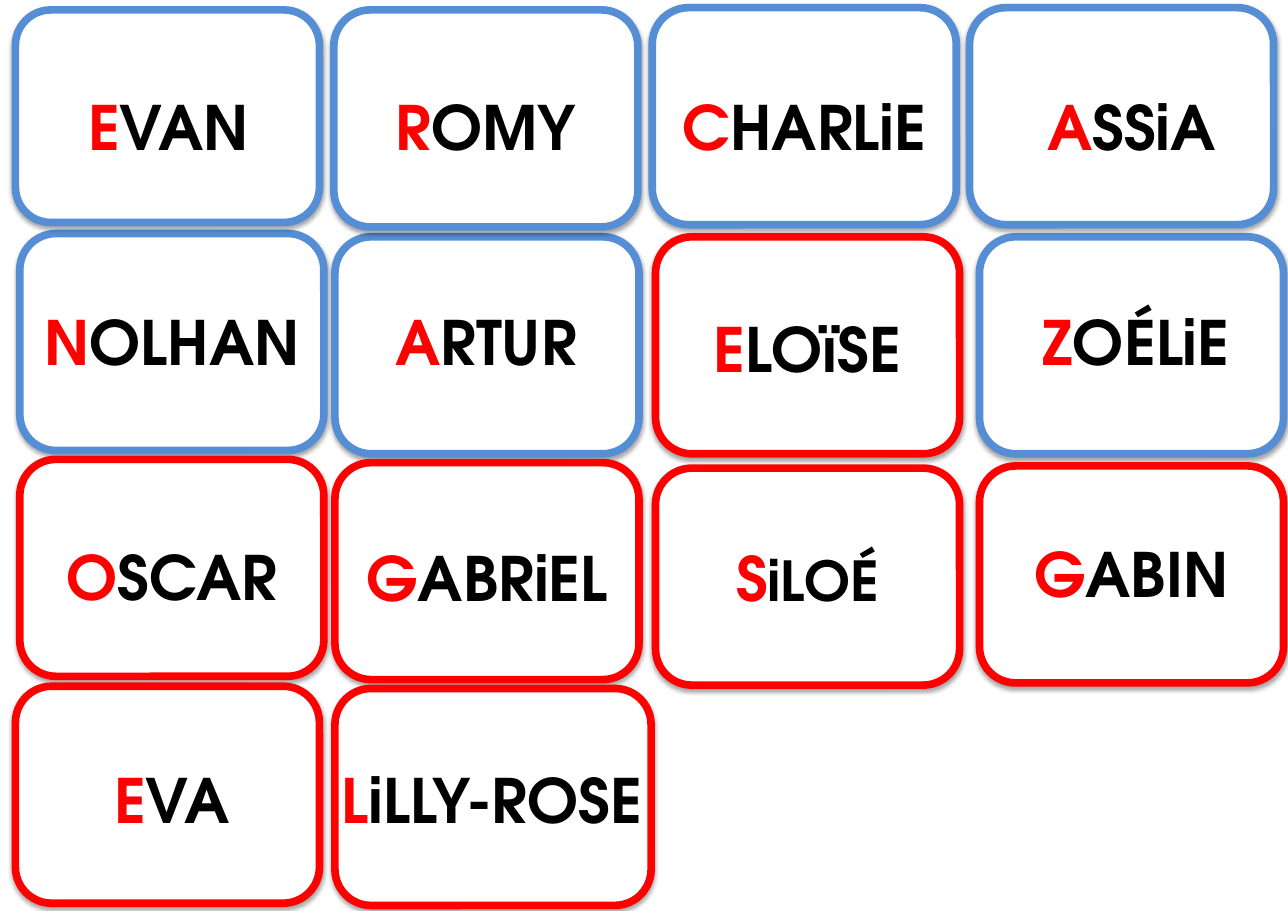
"""Build a sheet of first-name cards, each with a red initial."""
from dataclasses import dataclass

from lxml import etree
from pptx import Presentation
from pptx.dml.color import RGBColor
from pptx.enum.shapes import MSO_SHAPE
from pptx.enum.text import MSO_AUTO_SIZE, PP_ALIGN
from pptx.oxml.ns import qn
from pptx.util import Pt

ROUNDED = MSO_SHAPE.ROUNDED_RECTANGLE
CENTER = PP_ALIGN.CENTER
GROW = MSO_AUTO_SIZE.SHAPE_TO_FIT_TEXT
FONT = "TeX Gyre Adventor"
BLUE, RED, BLACK, WHITE = "558ED5", "FF0000", "000000", "FFFFFF"
CARD_WIDTH, CARD_HEIGHT, LABEL_HEIGHT = 198.72, 141.84, 55.44


@dataclass
class NameCard:
    name: str
    border: str
    left: float
    top: float
    label_left: float
    label_top: float
    width: float = CARD_WIDTH
    height: float = CARD_HEIGHT
    label_width: float = CARD_WIDTH
    ending_size: float = 40


CARDS = [
    NameCard("ZOÉLiE", BLUE, 640.08, 154.8, 642.96, 195.12),
    NameCard("NOLHAN", BLUE, 12.96, 152.64, 12.96, 195.12),
    NameCard("ARTUR", BLUE, 218.88, 154.8, 218.16, 195.12),
    NameCard("EVAN", BLUE, 10.08, 6.48, 10.8, 54.72, height=138.96),
    NameCard("ROMY", BLUE, 218.16, 6.48, 218.16, 54.72),
    NameCard("CHARLiE", BLUE, 426.24, 5.04, 426.24, 54.72),
    NameCard("ASSiA", BLUE, 633.6, 5.04, 640.08, 54.72),
    NameCard("ELOïSE", RED, 428.4, 154.8, 428.4, 200.16),
    NameCard("OSCAR", RED, 12.96, 300.24, 12.96, 349.2),
    NameCard("GABRiEL", RED, 218.88, 302.4, 218.88, 349.92),
    NameCard("SiLOÉ", RED, 428.4, 306, 428.4, 349.92, ending_size=36),
    NameCard("GABIN", RED, 640.08, 304.56, 640.08, 347.04),
    NameCard("EVA", RED, 10.08, 448.56, 12.96, 494.64),
    NameCard("LiLLY-ROSE", RED, 218.88, 450, 205.92, 494.64,
             width=206.64, label_width=231.12),
]


def rgb(value: str) -> RGBColor:
    return RGBColor.from_string(value)


def add_run(paragraph, text: str, *, color: str, size: float = 40) -> None:
    run = paragraph.add_run()
    run.text = text
    run.font.name = FONT
    run.font.size = Pt(size)
    run.font.bold = True
    run.font.color.rgb = rgb(color)


def add_shadow(shape) -> None:
    shape.shadow.inherit = False
    effects = shape.element.spPr.find(qn("a:effectLst"))
    shadow = etree.SubElement(
        effects, qn("a:outerShdw"), blurRad=str(Pt(3.1)), dist=str(Pt(1.8)),
        dir="5400000", rotWithShape="0")
    tint = etree.SubElement(shadow, qn("a:srgbClr"), val=BLACK)
    etree.SubElement(tint, qn("a:alpha"), val="35000")


def draw_frame(slide, card: NameCard) -> None:
    frame = slide.shapes.add_shape(
        ROUNDED, Pt(card.left), Pt(card.top), Pt(card.width), Pt(card.height))
    frame.fill.solid()
    frame.fill.fore_color.rgb = rgb(WHITE)
    frame.line.color.rgb = rgb(card.border)
    frame.line.width = Pt(5)
    add_shadow(frame)


def draw_name(slide, card: NameCard) -> None:
    label = slide.shapes.add_textbox(
        Pt(card.label_left), Pt(card.label_top), Pt(card.label_width), Pt(LABEL_HEIGHT))
    label.text_frame.word_wrap = True
    label.text_frame.auto_size = GROW
    paragraph = label.text_frame.paragraphs[0]
    paragraph.alignment = CENTER
    add_run(paragraph, card.name[0], color=RED)
    add_run(paragraph, card.name[1:], color=BLACK, size=card.ending_size)


def main() -> None:
    deck = Presentation()
    deck.slide_width, deck.slide_height = Pt(841.68), Pt(595.44)
    slide = deck.slides.add_slide(deck.slide_layouts[6])
    for card in CARDS:
        draw_frame(slide, card)
        draw_name(slide, card)
    deck.save("out.pptx")


if __name__ == "__main__":
    main()
